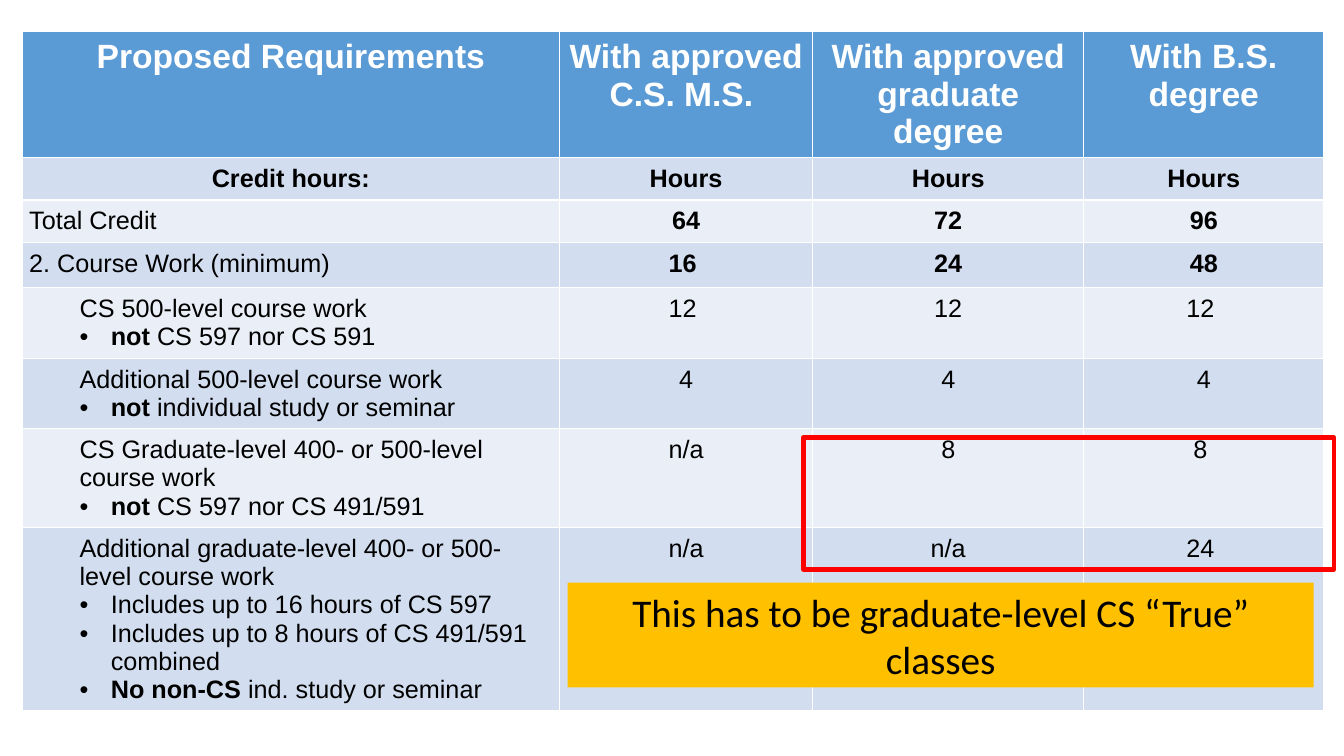
"""Build a slide with a table of proposed degree requirements and a highlighted note."""
from lxml import etree
from pptx import Presentation
from pptx.dml.color import RGBColor
from pptx.enum.shapes import MSO_SHAPE
from pptx.enum.text import MSO_ANCHOR, PP_ALIGN
from pptx.oxml.ns import qn
from pptx.util import Inches, Pt

CENTER, MIDDLE, RECT = PP_ALIGN.CENTER, MSO_ANCHOR.MIDDLE, MSO_SHAPE.RECTANGLE

HEADER = ["Proposed Requirements", "With approved C.S. M.S. ",
          "With approved graduate degree", "With B.S. degree"]
SUBHEADER = ["Credit hours:", "Hours", "Hours", "Hours"]
TOTALS = [
    ["Total Credit", "64", "72", "96"],
    ["2. Course Work (minimum)", "16 ", "24", "48"],
]
COURSES = [
    ("CS 500-level course work",
     [("not ", "CS 597 nor CS 591")], ["12 ", "12", "12 "]),
    ("Additional 500-level course work",
     [("not ", "individual study or seminar")], ["4", "4", "4"]),
    ("CS Graduate-level 400- or 500-level course work",
     [("not ", "CS 597 nor CS 491/591")], ["n/a", "8", "8 "]),
    ("Additional graduate-level 400- or 500-level course work",
     [("", "Includes up to 16 hours of CS 597"),
      ("", "Includes up to 8 hours of CS 491/591 combined"),
      ("No non-CS ", "ind. study or seminar")], ["n/a", "n/a", "24 "]),
]
NOTE = "This has to be graduate-level CS “True” classes"

COLORS = {"header": "5B9BD5", "odd": "D2DEEF", "even": "EAEFF7", "white": "FFFFFF",
          "black": "000000", "frame": "FF0000", "note": "FFC000"}
COLS = [5.33, 2.51, 2.69, 2.38]
ROWS = [1.25, 0.42, 0.42, 0.45, 0.7, 0.7, 0.98, 1.81]
TABLE_AT = (0.22, 0.31)
FRAME_BOX = (7.97, 4.34, 5.26, 1.31)
NOTE_BOX = (5.63, 5.78, 7.4, 1.04)
MARGIN = 0.07


def rgb(name):
    return RGBColor.from_string(COLORS[name])


def style(run, size=18, bold=False, color="black", font="Arial"):
    run.font.size, run.font.bold, run.font.name = Pt(size), bold, font
    run.font.color.rgb = rgb(color)


def indent(p, left, first=0.0, bullet=None):
    pPr = p._p.get_or_add_pPr()
    pPr.set("marL", str(Inches(left)))
    pPr.set("indent", str(Inches(first)))
    if bullet:
        etree.SubElement(pPr, qn("a:buFont")).set("typeface", "Arial")
        etree.SubElement(pPr, qn("a:buChar")).set("char", bullet)


def fill_cell(cell, text, centered, **font):
    p = cell.text_frame.paragraphs[0]
    p.text = text
    if centered:
        p.alignment = CENTER
    for r in p.runs:
        style(r, **font)


def fill_course(cell, title, rules):
    fill_cell(cell, title, False)
    indent(cell.text_frame.paragraphs[0], 0.5)
    for strong, plain in rules:
        p = cell.text_frame.add_paragraph()
        p.level = 1
        indent(p, 0.81, -0.31, "•")
        for text, bold in ((strong, True), (plain, False)):
            if text:
                r = p.add_run()
                r.text = text
                style(r, bold=bold)


def add_requirements(s):
    left, top = TABLE_AT
    table = s.shapes.add_table(len(ROWS), len(COLS), Inches(left), Inches(top),
                               Inches(sum(COLS)), Inches(sum(ROWS))).table
    for column, width in zip(table.columns, COLS):
        column.width = Inches(width)
    for i, height in enumerate(ROWS):
        table.rows[i].height = Inches(height)
        for cell in table.rows[i].cells:
            cell.margin_left = cell.margin_right = Inches(MARGIN)
            cell.margin_top = cell.margin_bottom = Inches(MARGIN)
            cell.fill.solid()
            cell.fill.fore_color.rgb = rgb("header" if i == 0 else "odd" if i % 2 else "even")

    for j in range(len(COLS)):
        fill_cell(table.cell(0, j), HEADER[j], True, size=24, bold=True, color="white")
        fill_cell(table.cell(1, j), SUBHEADER[j], True, bold=True)
        for i, row in enumerate(TOTALS, 2):
            fill_cell(table.cell(i, j), row[j], j > 0, bold=j > 0)
    for i, (title, rules, hours) in enumerate(COURSES, 2 + len(TOTALS)):
        fill_course(table.cell(i, 0), title, rules)
        for j, value in enumerate(hours, 1):
            fill_cell(table.cell(i, j), value, True)


def add_box(s, box):
    sp = s.shapes.add_shape(RECT, *map(Inches, box))
    sp.shadow.inherit = False
    return sp


def main():
    prs = Presentation()
    prs.slide_width, prs.slide_height = Inches(13.33), Inches(7.5)
    s = prs.slides.add_slide(prs.slide_layouts[6])
    add_requirements(s)

    frame = add_box(s, FRAME_BOX)
    frame.fill.background()
    frame.line.color.rgb = rgb("frame")
    frame.line.width = Pt(3)

    note = add_box(s, NOTE_BOX)
    note.fill.solid()
    note.fill.fore_color.rgb = rgb("note")
    note.line.fill.background()
    tf = note.text_frame
    tf.word_wrap = True
    tf.vertical_anchor = MIDDLE
    tf.text = NOTE
    p = tf.paragraphs[0]
    p.alignment = CENTER
    style(p.runs[0], size=28, font="Calibri")

    prs.save("out.pptx")


if __name__ == "__main__":
    main()
